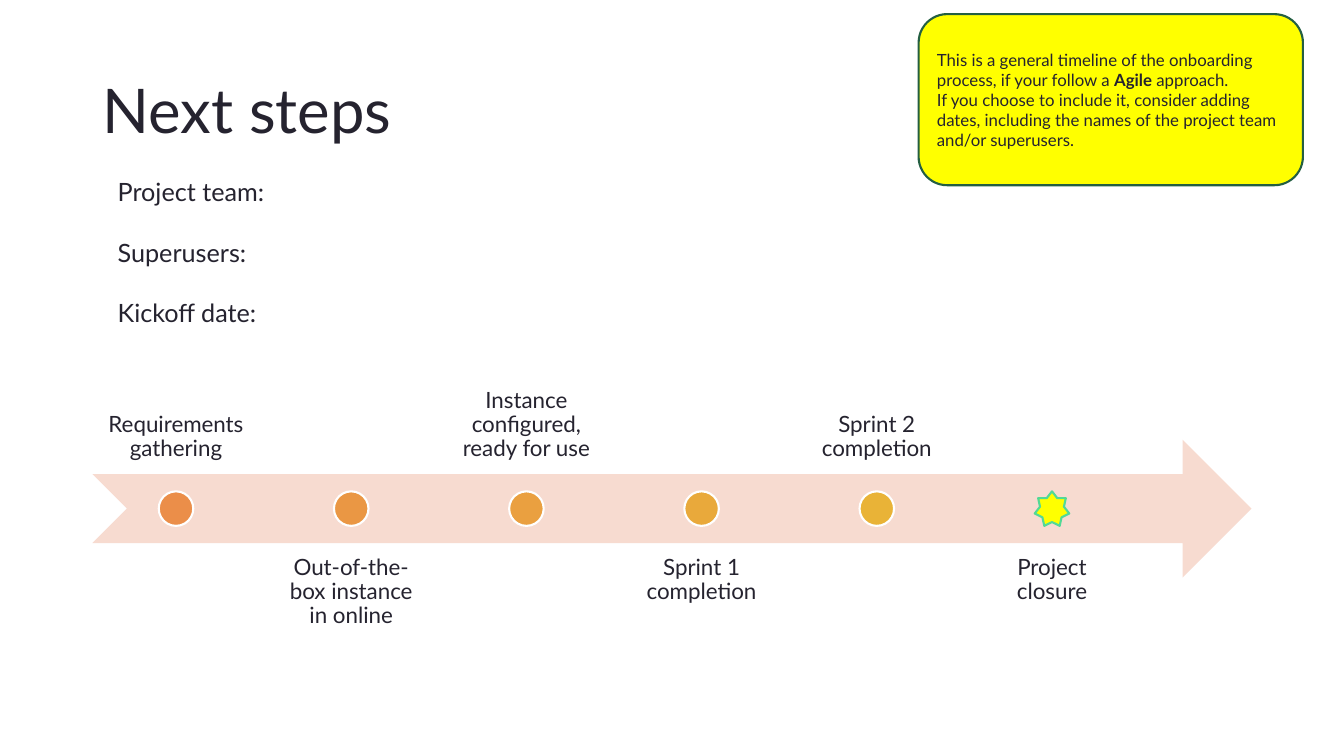
from pptx import Presentation
from pptx.dml.color import RGBColor
from pptx.enum.shapes import MSO_SHAPE
from pptx.enum.text import MSO_ANCHOR, PP_ALIGN
from pptx.util import Pt

FONT = "Lato"
INK = "25232F"


def color(code):
    return RGBColor.from_string(code)


class Page:
    """Holds the text style and the slide being built."""

    def __init__(self, deck):
        self.slide = deck.slides.add_slide(deck.slide_layouts[5])
        self.font, self.ink = FONT, INK

    def style(self, frame, size, align=PP_ALIGN.LEFT, line=1.0, gap=0):
        for para in frame.paragraphs:
            para.alignment, para.line_spacing = align, line
            para.space_before = Pt(0 if para is frame.paragraphs[0] else gap)
            para.space_after = Pt(0)
            for run in para.runs:
                run.font.size, run.font.name = Pt(size), self.font
                run.font.color.rgb = color(self.ink)

    def title(self, text, x, y, w, h, size):
        shape = self.slide.shapes.title
        shape.left, shape.top, shape.width, shape.height = map(Pt, (x, y, w, h))
        frame = shape.text_frame
        frame.text = text
        frame.vertical_anchor = MSO_ANCHOR.MIDDLE
        self.style(frame, size, line=0.9)

    def shape(self, kind, x, y, w, h, fill, edge=None):
        shape = self.slide.shapes.add_shape(kind, Pt(x), Pt(y), Pt(w), Pt(h))
        shape.shadow.inherit = False
        shape.fill.solid()
        shape.fill.fore_color.rgb = color(fill)
        if edge:
            shape.line.color.rgb = color(edge)
            shape.line.width = Pt(1.5)
        else:
            shape.line.fill.background()
        return shape

    def text(self, text, x, y, w, h, size, anchor=MSO_ANCHOR.TOP, inset=None, **look):
        box = self.slide.shapes.add_textbox(Pt(x), Pt(y), Pt(w), Pt(h))
        frame = box.text_frame
        frame.word_wrap = True
        frame.vertical_anchor = anchor
        if inset:
            frame.margin_left = frame.margin_right = Pt(inset)
            frame.margin_top = frame.margin_bottom = Pt(inset)
        frame.text = text
        self.style(frame, size, **look)

    def note(self, paras, x, y, w, h, fill, edge, size):
        """Rounded box; each paragraph is a list of (text, bold) parts."""
        shape = self.shape(MSO_SHAPE.ROUNDED_RECTANGLE, x, y, w, h, fill, edge)
        frame = shape.text_frame
        frame.word_wrap = True
        frame.vertical_anchor = MSO_ANCHOR.MIDDLE
        for i, parts in enumerate(paras):
            para = frame.add_paragraph() if i else frame.paragraphs[0]
            for text, bold in parts:
                run = para.add_run()
                run.text, run.font.bold = text, bold
        self.style(frame, size)


def main():
    deck = Presentation()
    deck.slide_width, deck.slide_height = Pt(960), Pt(540)
    page = Page(deck)
    left, width = 66, 828
    page.title("Next steps", left, 28.75, width, 104.4, 44)

    # Timeline arrow
    top, high = 314, 98.6
    page.shape(MSO_SHAPE.NOTCHED_RIGHT_ARROW, left, top, width, high, "F7DBD0")

    # Milestones, with labels in turn above and below the arrow
    steps = [
        ("Requirements gathering", "EB8E49"),
        ("Out-of-the-box instance in online", "EA9744"),
        ("Instance configured, ready for use", "EAA040"),
        ("Sprint 1 completion", "E9A93B"),
        ("Sprint 2 completion", "E9B337"),
        ("Project closure", "FFFF00"),
    ]
    pitch, wide, dot = 125.14, 119.5, high / 4
    for i, (label, fill) in enumerate(steps):
        x = left + i * pitch
        below = i % 2
        page.text(label, x, top + high * 0.75 if below else top - high * 0.75,
                  wide, high, 16, MSO_ANCHOR.TOP if below else MSO_ANCHOR.BOTTOM,
                  inset=9, align=PP_ALIGN.CENTER, line=0.9)
        last = i == len(steps) - 1
        page.shape(MSO_SHAPE.STAR_7_POINT if last else MSO_SHAPE.OVAL,
                   x + (wide - dot) / 2, top + (high - dot) / 2, dot, dot,
                   fill, "52D996" if last else "FFFFFF")

    # Advice note
    page.note([
        [("This is a general timeline of the onboarding process, "
          "if your follow a ", False), ("Agile", True), (" approach.", False)],
        [("If you choose to include it, consider adding dates, including "
          "the names of the project team and/or superusers.", False)],
    ], 656.2, 10.1, 274.5, 122.2, "FFFF00", "245F42", 12)

    # Project facts
    page.text("Project team:\nSuperusers:\nKickoff date:",
              77, 122.5, 560, 116.6, 18, gap=21.6)

    deck.save("out.pptx")


if __name__ == "__main__":
    main()
